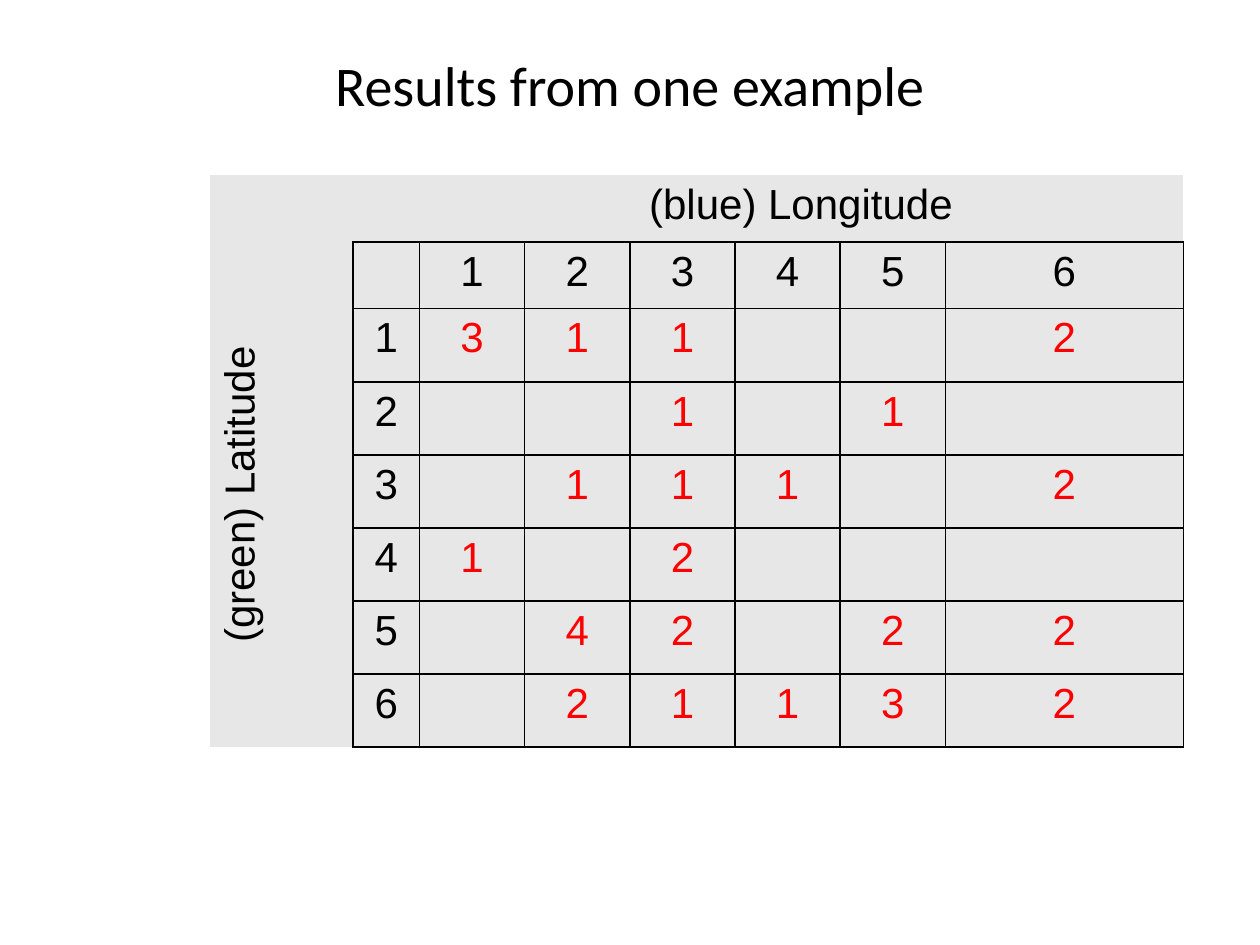
from lxml import etree
from pptx import Presentation
from pptx.dml.color import RGBColor
from pptx.enum.text import MSO_ANCHOR as Anchor, PP_ALIGN as Align
from pptx.oxml.ns import qn
from pptx.util import Inches, Pt

BLACK = RGBColor(0x00, 0x00, 0x00)
RED = RGBColor(0xFF, 0x00, 0x00)
GRAY = RGBColor(0xE7, 0xE7, 0xE7)
NO_STYLE = "{2D5ABB26-0587-4C30-8999-92F81FD0307C}"

TITLE_BOX = (0.5, 0.3, 9, 0.74)
TABLE_BOX = (1.67, 1.39, 6.67, 4.54)
LATITUDE_WIDTH, LABEL_WIDTH = 1.13, 0.53
HEADER_HEIGHT = 0.53

# Rows are latitudes 1-6, columns are longitudes 1-6
COUNTS = [
    ["3", "1", "1", "", "", "2"],
    ["", "", "1", "", "1", ""],
    ["", "1", "1", "1", "", "2"],
    ["1", "", "2", "", "", ""],
    ["", "4", "2", "", "2", "2"],
    ["", "2", "1", "1", "3", "2"],
]


def set_attributes(target, values):
    for name, value in values.items():
        setattr(target, name, value)


def write_text(text_frame, text, size, font_name, color=BLACK):
    text_frame.text = text
    paragraph = text_frame.paragraphs[0]
    paragraph.alignment = Align.CENTER
    font = paragraph.runs[0].font
    set_attributes(font, {"size": Pt(size), "name": font_name, "bold": False})
    font.color.rgb = color


def add_borders(cell, sides):
    properties = cell._tc.get_or_add_tcPr()
    for side in sides:
        line = etree.SubElement(properties, qn(f"a:ln{side}"), w=str(Pt(1)))
        fill = etree.SubElement(line, qn("a:solidFill"))
        etree.SubElement(fill, qn("a:srgbClr"), val=str(BLACK))


def add_title(slide, box):
    title = slide.shapes.title
    left, top, width, height = map(Inches, box)
    set_attributes(title, {"left": left, "top": top, "width": width, "height": height})
    set_attributes(title.text_frame, {"vertical_anchor": Anchor.MIDDLE, "word_wrap": True})
    write_text(title.text_frame, "Results from one example", 32, "Calibri")


def add_results_table(slide, box):
    size = len(COUNTS)
    width, height = box[2:]
    frame = slide.shapes.add_table(size + 2, size + 2, *map(Inches, box))
    table = frame.table
    set_attributes(table, {"first_row": False, "horz_banding": False})
    table._tbl.tblPr.find(qn("a:tableStyleId")).text = NO_STYLE

    # Column widths and row heights
    count_width = (width - LATITUDE_WIDTH - LABEL_WIDTH) / size
    count_height = (height - 2 * HEADER_HEIGHT) / size
    for column, inches in zip(table.columns, [LATITUDE_WIDTH, LABEL_WIDTH] + [count_width] * size):
        column.width = Inches(inches)
    for row, inches in zip(table.rows, [HEADER_HEIGHT] * 2 + [count_height] * size):
        row.height = Inches(inches)

    # Numbered grid with the counts
    labels = [str(number + 1) for number in range(size)]
    grid = [[""] + labels] + [[label] + counts for label, counts in zip(labels, COUNTS)]
    for i, values in enumerate(grid):
        for j, value in enumerate(values):
            cell = table.cell(i + 1, j + 1)
            add_borders(cell, "LRTB")
            if value:
                write_text(cell.text_frame, value, 24, "Arial", RED if i and j else BLACK)

    # Axis headings
    longitude = table.cell(0, 0)
    longitude.merge(table.cell(0, size + 1))
    longitude.margin_left = Inches(1.75)
    write_text(longitude.text_frame, "(blue) Longitude", 24, "Arial")

    latitude = table.cell(1, 0)
    latitude.merge(table.cell(size + 1, 0))
    latitude.vertical_anchor = Anchor.MIDDLE
    latitude._tc.get_or_add_tcPr().set("vert", "vert270")
    add_borders(latitude, "R")
    write_text(latitude.text_frame, "(green) Latitude", 24, "Arial")

    for cell in table.iter_cells():
        cell.fill.solid()
        cell.fill.fore_color.rgb = GRAY


def main():
    presentation = Presentation()
    set_attributes(presentation, {"slide_width": Inches(10), "slide_height": Inches(7.5)})
    slide = presentation.slides.add_slide(presentation.slide_layouts[5])
    add_title(slide, TITLE_BOX)
    add_results_table(slide, TABLE_BOX)
    presentation.save("out.pptx")


if __name__ == "__main__":
    main()
